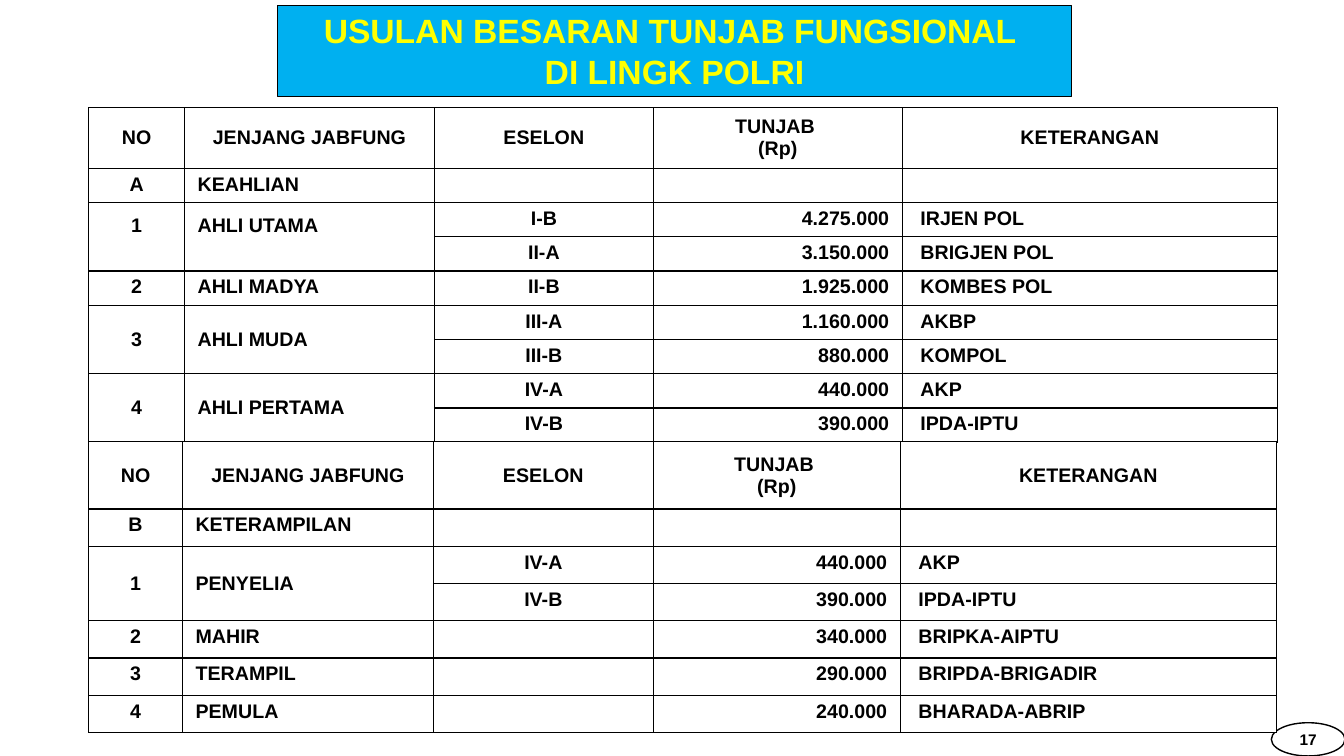
import pptx
import pptx.util
import pptx.dml.color
import pptx.enum.text
import pptx.enum.shapes
import pptx.oxml

PX = 9144
NS = 'xmlns:a="http://schemas.openxmlformats.org/drawingml/2006/main"'
ALIGN = pptx.enum.text.PP_ALIGN
ANCHOR = pptx.enum.text.MSO_ANCHOR
SIDES = (ALIGN.CENTER, ALIGN.LEFT, ALIGN.CENTER, ALIGN.RIGHT, ALIGN.JUSTIFY)
HEAD = ("NO", "JENJANG JABFUNG", "ESELON", "TUNJAB \n(Rp)", "KETERANGAN")
SKILL = (
    HEAD,
    ("A", "KEAHLIAN", "", "", ""),
    ("1", "AHLI UTAMA", "I-B", "4.275.000", "IRJEN POL"),
    ("", "", "II-A", "3.150.000", "BRIGJEN POL"),
    ("2", "AHLI MADYA", "II-B", "1.925.000", "KOMBES POL"),
    ("3", "AHLI MUDA", "III-A", "1.160.000", "AKBP"),
    ("", "", "III-B", "880.000", "KOMPOL"),
    ("4", "AHLI PERTAMA", "IV-A", "440.000", "AKP"),
    ("", "", "IV-B", "390.000", "IPDA-IPTU"),
)
CRAFT = (
    HEAD,
    ("B", "KETERAMPILAN", "", "", ""),
    ("1", "PENYELIA", "IV-A", "440.000", "AKP"),
    ("", "", "IV-B", "390.000", "IPDA-IPTU"),
    ("2", "MAHIR", "", "340.000", "BRIPKA-AIPTU"),
    ("3", "TERAMPIL", "", "290.000", "BRIPDA-BRIGADIR"),
    ("4", "PEMULA", "", "240.000", "BHARADA-ABRIP"),
)


def px(n):
    return pptx.util.Emu(n * PX)


def rgb(code):
    return pptx.dml.color.RGBColor.from_string(code)


def xml(text):
    return pptx.oxml.parse_xml(text)


def paint(shape, fill, width):
    shape.fill.solid()
    shape.fill.fore_color.rgb = rgb(fill)
    shape.line.color.rgb = rgb("000000")
    shape.line.width = pptx.util.Pt(width)


def write(frame, text, size=14, color="000000", align=ALIGN.CENTER, glow=False):
    for i, line in enumerate(text.split("\n")):
        para = frame.add_paragraph() if i else frame.paragraphs[0]
        para.alignment = align
        run = para.add_run()
        run.text = line
        font = run.font
        font.size = pptx.util.Pt(size)
        font.bold = True
        font.color.rgb = rgb(color)
        if glow:
            props = run._r.get_or_add_rPr()
            props.insert(0, xml(
                f'<a:ln {NS} w="9525"><a:solidFill><a:srgbClr val="{color}"/>'
                '</a:solidFill></a:ln>'))
            props.append(xml(
                f'<a:effectLst {NS}><a:outerShdw blurRad="38100" dist="38100" '
                'dir="2700000" algn="tl"><a:srgbClr val="000000">'
                '<a:alpha val="60000"/></a:srgbClr></a:outerShdw></a:effectLst>'))
        font.name = "Arial"


def edge(cell):
    props = cell._tc.get_or_add_tcPr()
    for side in "LRTB":
        props.append(xml(
            f'<a:ln{side} {NS} w="12700"><a:solidFill><a:srgbClr val="000000"/>'
            f'</a:solidFill></a:ln{side}>'))
    cell.fill.solid()
    cell.fill.fore_color.rgb = rgb("FFFFFF")


def pad(cell, left, right, top, bottom):
    cell.margin_left, cell.margin_right = px(left), px(right)
    cell.margin_top, cell.margin_bottom = px(top), px(bottom)


def grid(slide, data, top, cols, head, row):
    frame = slide.shapes.add_table(
        len(data), len(cols), px(88), px(top), px(sum(cols)),
        px(head + row * (len(data) - 1)))
    table = frame.table
    table.first_row = table.horz_banding = False
    for col, width in zip(table.columns, cols):
        col.width = px(width)
    for r, line in enumerate(data):
        table.rows[r].height = px(row if r else head)
        for c, text in enumerate(line):
            cell = table.cell(r, c)
            edge(cell)
            if text:
                pad(cell, 18 if r and c == 4 else 13, 13, 5, 5)
                write(cell.text_frame, text, align=SIDES[c] if r else ALIGN.CENTER)
            else:
                pad(cell, 13, 13, 0, 0)
            if r == 0:
                cell.vertical_anchor = ANCHOR.MIDDLE
            if c < 2 and not text:
                start = table.cell(r - 1, c)
                start.merge(cell)
                start.vertical_anchor = ANCHOR.MIDDLE
    return table


def title(slide):
    box = slide.shapes.title
    box.left, box.top, box.width, box.height = px(275), px(5), px(788), px(91)
    paint(box, "00B0F0", 0.75)
    frame = box.text_frame
    frame.auto_size = pptx.enum.text.MSO_AUTO_SIZE.NONE
    frame.vertical_anchor = ANCHOR.TOP
    write(frame, "USULAN BESARAN TUNJAB FUNGSIONAL \nDI LINGK POLRI",
          size=24, color="FFFF00", glow=True)


def badge(slide):
    oval = slide.shapes.add_shape(
        pptx.enum.shapes.MSO_SHAPE.OVAL, px(1261), px(717), px(73), px(33))
    oval.shadow.inherit = False
    paint(oval, "FFFFFF", 1)
    frame = oval.text_frame
    pad(frame, 0, 0, 0, 0)
    frame.vertical_anchor = ANCHOR.MIDDLE
    write(frame, "17", size=11)


def main():
    deck = pptx.Presentation()
    deck.slide_width, deck.slide_height = px(1333), px(750)
    slide = deck.slides.add_slide(deck.slide_layouts[5])
    title(slide)
    table = grid(slide, SKILL, 107, (95, 248, 217, 247, 372), 60, 34)
    for c in range(2):
        table.cell(2, c).margin_bottom = px(27)
    badge(slide)
    grid(slide, CRAFT, 438, (93, 249, 218, 245, 373), 67, 37)
    deck.save("out.pptx")


if __name__ == "__main__":
    main()
